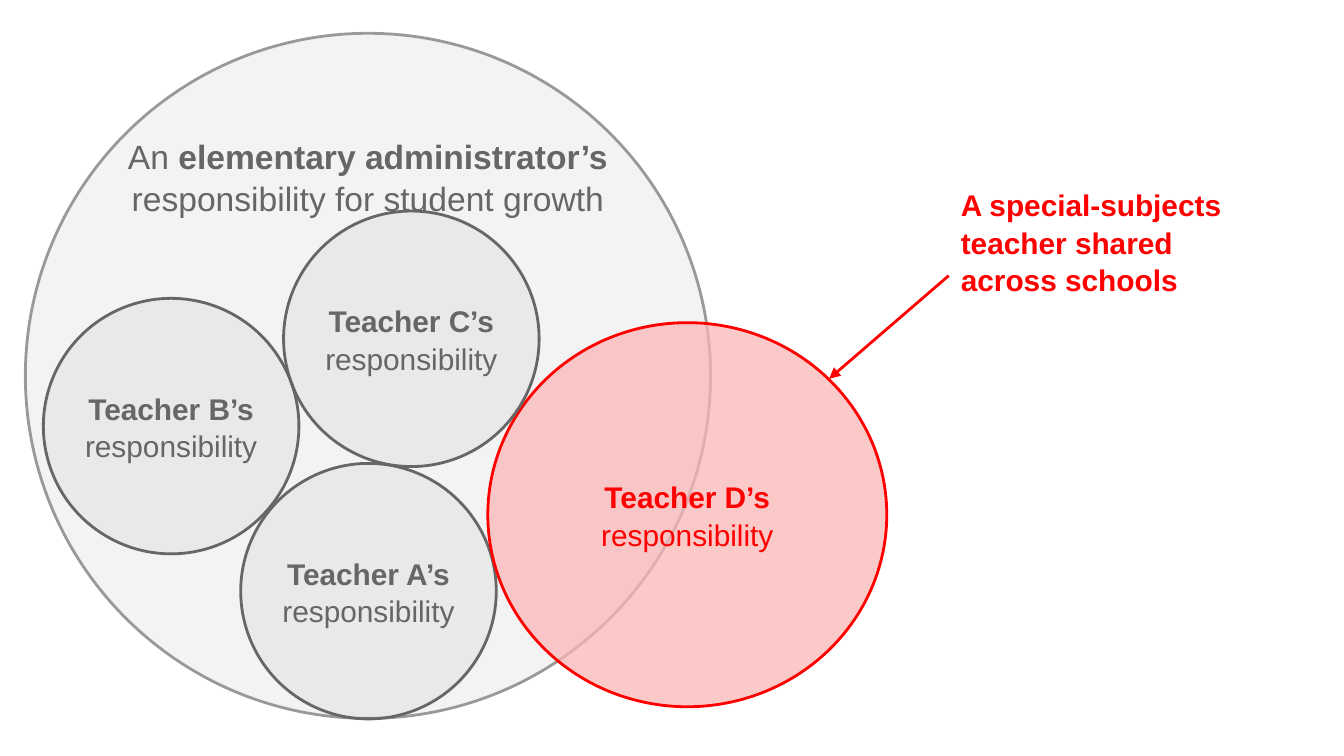
from pptx import Presentation
from pptx.dml.color import RGBColor
from pptx.enum.shapes import MSO_CONNECTOR, MSO_SHAPE
from pptx.enum.text import MSO_ANCHOR, PP_ALIGN
from pptx.oxml.ns import qn
from pptx.util import Cm, Pt
from lxml.etree import SubElement

PALE = RGBColor(0xF3, 0xF3, 0xF3)
SILVER = RGBColor(0x99, 0x99, 0x99)
GRAY = RGBColor(0x66, 0x66, 0x66)
PINK = RGBColor(0xFB, 0xB6, 0xB6)
RED = RGBColor(0xFF, 0x00, 0x00)


class Diagram:
    font_name = "Arial"
    line_width = Pt(1.5)
    line_spacing = 1.05

    def __init__(self, slide):
        self.slide = slide

    def label(self, shape, paragraphs, color, size, anchor, align, inset):
        frame = shape.text_frame
        margins = ("margin_left", "margin_top", "margin_right", "margin_bottom")
        frame_format = dict.fromkeys(margins, Cm(inset))
        frame_format.update(word_wrap=True, vertical_anchor=anchor)
        for key, value in frame_format.items():
            setattr(frame, key, value)
        for index, runs in enumerate(paragraphs):
            paragraph = frame.add_paragraph() if index else frame.paragraphs[0]
            paragraph.alignment = align
            paragraph.line_spacing = self.line_spacing
            for words, bold in runs:
                run = paragraph.add_run()
                run.text = words
                run.font.color.rgb = color
                font_format = {"name": self.font_name, "size": Pt(size), "bold": bold}
                for key, value in font_format.items():
                    setattr(run.font, key, value)

    def circle(self, box, fill, outline, paragraphs, color, size=16,
               anchor=MSO_ANCHOR.MIDDLE, opacity=100):
        shape = self.slide.shapes.add_shape(MSO_SHAPE.OVAL, *map(Cm, box))
        shape.shadow.inherit = False
        shape.fill.solid()
        shape.fill.fore_color.rgb = fill
        if opacity < 100:
            tint = shape._element.spPr.find(qn("a:solidFill"))[0]
            SubElement(tint, qn("a:alpha"), val=str(opacity * 1000))
        shape.line.color.rgb = outline
        shape.line.width = self.line_width
        self.label(shape, paragraphs, color, size, anchor, PP_ALIGN.CENTER, 0)

    def teacher(self, letter, box, fill=GRAY, color=GRAY, opacity=7):
        wording = [[(f"Teacher {letter}’s", True)], [("responsibility", False)]]
        self.circle(box, fill, color, wording, color, opacity=opacity)

    def note(self, box, words, color):
        shape = self.slide.shapes.add_textbox(*map(Cm, box))
        self.label(shape, [[(words, True)]], color, 16, MSO_ANCHOR.TOP,
                   PP_ALIGN.LEFT, 0.25)

    def arrow(self, tip, tail, color):
        connector = self.slide.shapes.add_connector(
            MSO_CONNECTOR.STRAIGHT, *map(Cm, tip + tail))
        connector.line.color.rgb = color
        connector.line.width = self.line_width
        properties = connector._element.spPr
        SubElement(properties.find(qn("a:ln")), qn("a:headEnd"), type="triangle")
        SubElement(properties, qn("a:effectLst"))


def main():
    presentation = Presentation()
    presentation.slide_width = Cm(25.4)
    presentation.slide_height = Cm(14.29)
    diagram = Diagram(presentation.slides.add_slide(presentation.slide_layouts[6]))

    administrator = [
        [("An ", False), ("elementary administrator’s", True)],
        [("responsibility for student growth", False)],
    ]
    diagram.circle((0.48, 0.63, 12.95, 12.95), PALE, SILVER, administrator, GRAY,
                   size=18, anchor=MSO_ANCHOR.TOP)

    diameter = 4.83
    diagram.teacher("A", (4.55, 8.76, diameter, diameter))
    diagram.arrow((15.67, 7.16), (17.93, 5.21), RED)
    diagram.note((17.91, 3.25, 6.15, 3.89),
                 "A special-subjects teacher shared across schools", RED)
    diagram.teacher("D", (9.22, 6.1, 7.54, 7.26), PINK, RED, 73)
    for letter, left, top in (("C", 5.36, 3.99), ("B", 0.82, 5.64)):
        diagram.teacher(letter, (left, top, diameter, diameter))

    presentation.save("out.pptx")


if __name__ == "__main__":
    main()
